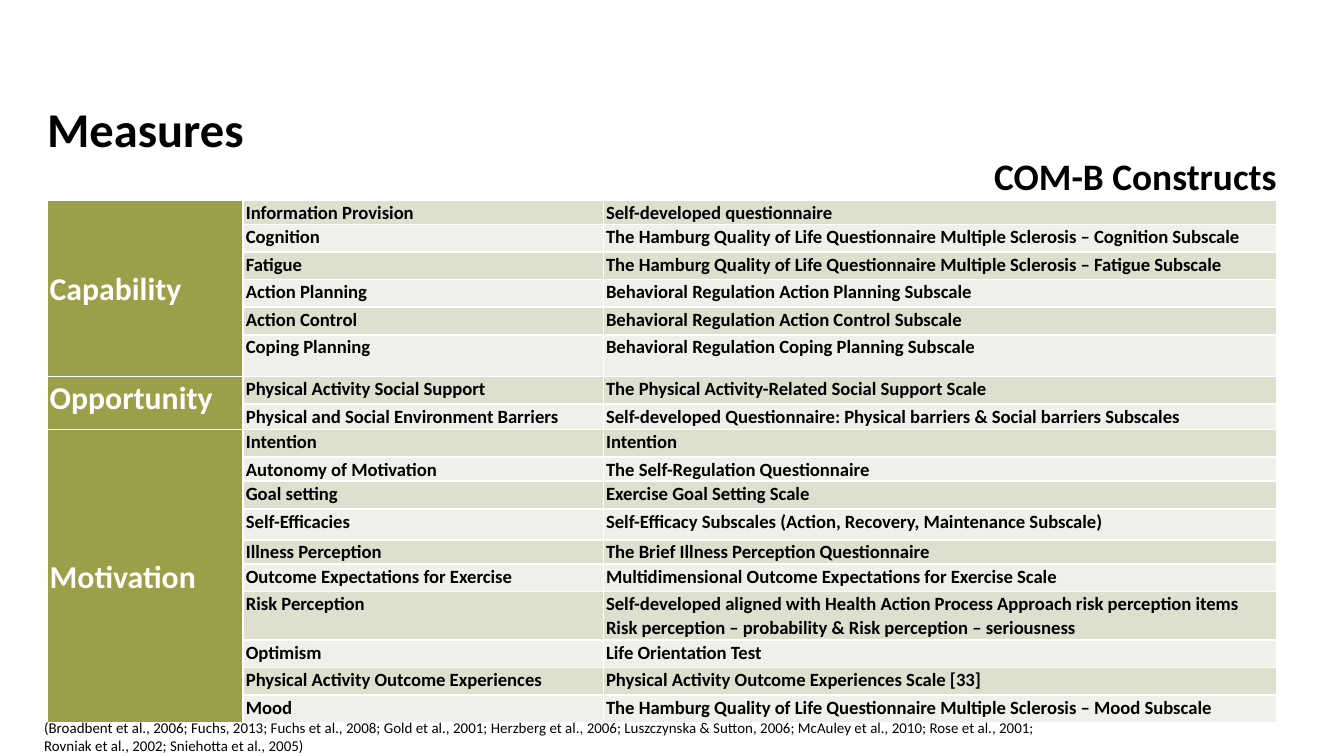
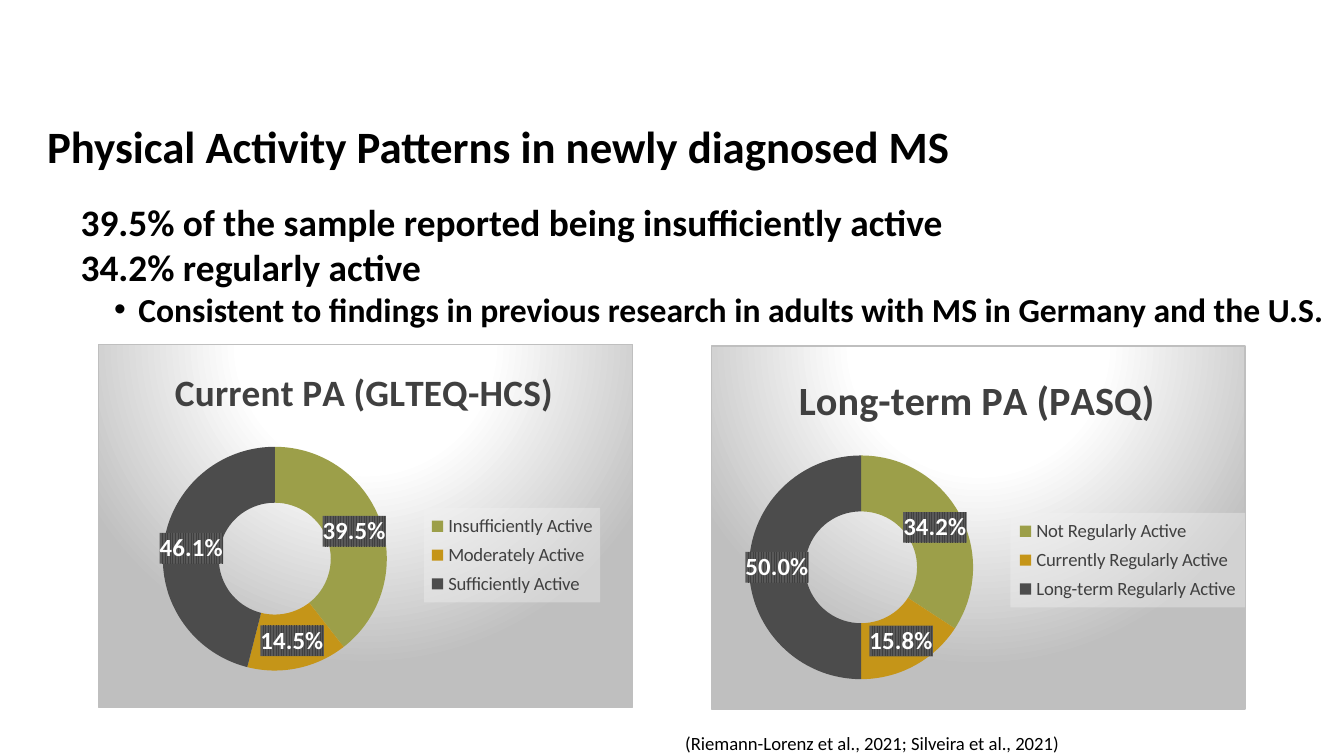
from pptx import Presentation
from pptx.chart.data import CategoryChartData
from pptx.dml.color import RGBColor
from pptx.enum.chart import XL_CHART_TYPE, XL_LEGEND_POSITION
from pptx.enum.text import MSO_ANCHOR, MSO_AUTO_SIZE, PP_ALIGN
from pptx.oxml import parse_xml
from pptx.oxml.ns import nsdecls, qn
from pptx.util import Inches, Pt

DONUT = XL_CHART_TYPE.DOUGHNUT
SIDE = XL_LEGEND_POSITION.RIGHT
TOP, MIDDLE = MSO_ANCHOR.TOP, MSO_ANCHOR.MIDDLE
LEFT, RIGHT = PP_ALIGN.LEFT, PP_ALIGN.RIGHT
FIXED = MSO_AUTO_SIZE.NONE

FACE = "Calibri"
COLORS = {
    "text": "000000", "white": "FFFFFF", "olive": "9C9F49", "gold": "C59518",
    "dark": "4C4C4C", "band": "DEDFCF", "pale": "EFF0E9", "gray": "404040",
    "edge": "BFBFBF", "key": "F2F2F2", "stripe": "595959",
}
SLICES = ["olive", "gold", "dark"]

COLS = [1.46, 2.68, 5.01]
TALL = 3.86
# Fixed row heights; the other rows share the rest of TALL equally
ODD_ROWS = {0: 0.17, 5: 0.31, 7: 0.19, 9: 0.17, 11: 0.23, 12: 0.17, 14: 0.36}
HAMBURG = "The Hamburg Quality of Life Questionnaire Multiple Sclerosis – "
GROUPS = [
    ("Capability", MIDDLE, [
        ("Information Provision", "Self-developed questionnaire"),
        ("Cognition", HAMBURG + "Cognition Subscale"),
        ("Fatigue", HAMBURG + "Fatigue Subscale"),
        ("Action Planning", "Behavioral Regulation Action Planning Subscale"),
        ("Action Control", "Behavioral Regulation Action Control Subscale"),
        ("Coping Planning", "Behavioral Regulation Coping Planning Subscale"),
    ]),
    ("Opportunity", TOP, [
        ("Physical Activity Social Support",
         "The Physical Activity-Related Social Support Scale"),
        ("Physical and Social Environment Barriers",
         "Self-developed Questionnaire: Physical barriers & Social barriers Subscales"),
    ]),
    ("Motivation", MIDDLE, [
        ("Intention", "Intention"),
        ("Autonomy of Motivation", "The Self-Regulation Questionnaire"),
        ("Goal setting", "Exercise Goal Setting Scale"),
        ("Self-Efficacies",
         "Self-Efficacy Subscales (Action, Recovery, Maintenance Subscale)"),
        ("Illness Perception", "The Brief Illness Perception Questionnaire"),
        ("Outcome Expectations for Exercise",
         "Multidimensional Outcome Expectations for Exercise Scale"),
        ("Risk Perception",
         "Self-developed aligned with Health Action Process Approach risk perception items\n"
         "Risk perception – probability & Risk perception – seriousness"),
        ("Optimism", "Life Orientation Test"),
        ("Physical Activity Outcome Experiences",
         "Physical Activity Outcome Experiences Scale [33]"),
        ("Mood", HAMBURG + "Mood Subscale"),
    ]),
]


def rgb(name):
    return RGBColor.from_string(COLORS[name])


def style(font, size, color="text", bold=False):
    font.name, font.size, font.bold = FACE, Pt(size), bold
    font.color.rgb = rgb(color)


def write(para, text, size, color="text", bold=False):
    run = para.add_run()
    run.text = text
    style(run.font, size, color, bold)


def indent(para, left, first):
    props = para._p.get_or_add_pPr()
    props.set("marL", str(Inches(left)))
    props.set("indent", str(Inches(first)))
    return props


def bullet(props, char=None):
    """Give the paragraph a bullet, or none."""
    mark = f'buChar {nsdecls("a")} char="{char}"' if char else f'buNone {nsdecls("a")}'
    props.append(parse_xml(f"<a:{mark}/>"))


def place(shape, left, top, width, height):
    shape.left, shape.top = Inches(left), Inches(top)
    shape.width, shape.height = Inches(width), Inches(height)
    frame = shape.text_frame
    frame.word_wrap, frame.auto_size = True, FIXED
    frame.vertical_anchor = TOP
    return frame


def add_slide(deck, title, size, *box):
    slide = deck.slides.add_slide(deck.slide_layouts[1])
    para = place(slide.shapes.title, *box).paragraphs[0]
    para.alignment = LEFT
    indent(para, 0, 0.25)
    write(para, title, size, bold=True)
    return slide


def add_body(slide, box, lines):
    """Fill the body with (text, size, align, level, left, first, bullet) lines."""
    frame = place(slide.placeholders[1], *box)
    for i, (text, size, align, level, left, first, char) in enumerate(lines):
        para = frame.add_paragraph() if i else frame.paragraphs[0]
        para.level, para.alignment = level, align
        para.space_before = Pt(0)
        bullet(indent(para, left, first), char)
        write(para, text, size, bold=True)


def add_cite(slide, text, size, *box):
    shape = slide.shapes.add_textbox(0, 0, 0, 0)
    write(place(shape, *box).paragraphs[0], text, size)


def format_cell(cell, fill):
    cell.margin_left = cell.margin_right = Inches(0.02)
    cell.margin_top = cell.margin_bottom = 0
    props = cell._tc.get_or_add_tcPr()
    for side in "LRTB":
        props.append(parse_xml(
            f'<a:ln{side} {nsdecls("a")} w="12700"><a:solidFill>'
            f'<a:srgbClr val="{COLORS["white"]}"/></a:solidFill></a:ln{side}>'))
    cell.fill.solid()
    cell.fill.fore_color.rgb = rgb(fill)


def fill_cell(cell, text, size, color="text"):
    for i, line in enumerate(text.split("\n")):
        para = cell.text_frame.add_paragraph() if i else cell.text_frame.paragraphs[0]
        para.line_spacing = 1.07
        write(para, line, size, color, True)


def add_measures(slide):
    count = sum(len(rows) for _, _, rows in GROUPS)
    plain = (TALL - sum(ODD_ROWS.values())) / (count - len(ODD_ROWS))
    table = slide.shapes.add_table(
        count, len(COLS), Inches(0.35), Inches(1.49),
        Inches(sum(COLS)), Inches(TALL)).table
    table.first_row = table.horz_banding = False
    for col, width in zip(table.columns, COLS):
        col.width = Inches(width)
    for i, row in enumerate(table.rows):
        row.height = Inches(ODD_ROWS.get(i, plain))
    start = 0
    for name, anchor, rows in GROUPS:
        for r, texts in enumerate(rows, start):
            label = table.cell(r, 0)
            format_cell(label, "olive")
            label.text_frame.paragraphs[0]._p.get_or_add_endParaRPr().set("sz", "800")
            for c, text in enumerate(texts, 1):
                format_cell(table.cell(r, c), "pale" if r % 2 else "band")
                fill_cell(table.cell(r, c), text, 10)
        head = table.cell(start, 0)
        head.merge(table.cell(start + len(rows) - 1, 0))
        head.vertical_anchor = anchor
        fill_cell(head, name, 17, "white")
        indent(head.text_frame.paragraphs[0], 0.25, -0.27)
        start += len(rows)


def paint(inner):
    return parse_xml(f'<c:spPr {nsdecls("c", "a")}>{inner}</c:spPr>')


def tint(name, alpha=100):
    return f'<a:srgbClr val="{COLORS[name]}"><a:alpha val="{alpha * 1000}"/></a:srgbClr>'


def lay(owner, after, inner, **parts):
    """Set a manual layout, as shares of the chart, behind the child named after."""
    for old in owner.findall(qn("c:layout")):
        owner.remove(old)
    target = '<c:layoutTarget val="inner"/>' if inner else ""
    modes = "".join(f'<c:{k}Mode val="edge"/>' for k in "xy")
    sizes = "".join(f'<c:{k} val="{v}"/>' for k, v in parts.items())
    node = parse_xml(f'<c:layout {nsdecls("c")}><c:manualLayout>{target}{modes}{sizes}'
                     "</c:manualLayout></c:layout>")
    if after:
        owner.find(qn(after)).addnext(node)
    else:
        owner.insert(0, node)


def add_backdrop(chart):
    stops = "".join(f'<a:gs pos="{pos}000">{tint(name)}</a:gs>'
                    for pos, name in [(0, "white"), (39, "white"), (100, "edge")])
    chart._chartSpace.find(qn("c:chart")).addnext(paint(
        f'<a:gradFill><a:gsLst>{stops}</a:gsLst><a:path path="circle">'
        '<a:fillToRect l="50000" t="-80000" r="50000" b="180000"/></a:path></a:gradFill>'
        f'<a:ln w="9525"><a:solidFill>{tint("edge")}</a:solidFill></a:ln>'))


def add_donut(slide, left, top, title, size, series, shares, spots):
    data = CategoryChartData(number_format="0.0%")
    data.categories = list(shares)
    data.add_series(series, list(shares.values()))
    chart = slide.shapes.add_chart(DONUT, Inches(left), Inches(top),
                                   Inches(3.98), Inches(2.71), data).chart
    style(chart.font, 10)
    add_backdrop(chart)

    chart.has_title = True
    write(chart.chart_title.text_frame.paragraphs[0], title, size, "gray", True)
    lay(chart.chart_title._element, "c:tx", False, **spots["title"])

    chart.has_legend = True
    legend = chart.legend
    legend.position, legend.include_in_layout = SIDE, False
    style(legend.font, 10, "gray")
    key = legend._element
    lay(key, "c:legendPos", False, **spots["legend"])
    key.find(qn("c:txPr")).addprevious(
        paint(f'<a:solidFill>{tint("key", 39)}</a:solidFill>'))

    plot = chart.plots[0]
    plot.vary_by_categories = True
    lay(chart._chartSpace.find(".//" + qn("c:plotArea")), None, True, **spots["plot"])
    for i, name in enumerate(SLICES):
        fill = plot.series[0].points[i].format.fill
        fill.solid()
        fill.fore_color.rgb = rgb(name)

    plot.has_data_labels = True
    labels = plot.data_labels
    labels.show_value, labels.show_percentage = True, False
    labels.number_format, labels.number_format_is_linked = "0.0%", False
    style(labels.font, 13.3, "white", True)
    labels._element.find(qn("c:txPr")).addprevious(paint(
        f'<a:pattFill prst="narVert"><a:fgClr>{tint("gray")}</a:fgClr>'
        f'<a:bgClr>{tint("stripe")}</a:bgClr></a:pattFill>'))


def main():
    deck = Presentation()
    deck.slide_width = Inches(10)
    deck.slide_height = deck.slide_width * 9 // 16

    slide = add_slide(deck, "Measures", 26, 0, 0.69, 9.5, 0.79)
    add_body(slide, (0.6, 1.09, 9, 3.61),
             [("COM-B Constructs", 20, RIGHT, 0, 0, 0, None)])
    add_measures(slide)
    add_cite(slide, "(Broadbent et al., 2006; Fuchs, 2013; Fuchs et al., 2008; "
             "Gold et al., 2001; Herzberg et al., 2006; Luszczynska & Sutton, 2006; "
             "McAuley et al., 2010; Rose et al., 2001; Rovniak et al., 2002; "
             "Sniehotta et al., 2005)", 8, 0.23, 5.3, 7.74, 0.37)

    slide = add_slide(deck, "Physical Activity Patterns in newly diagnosed MS", 24,
                      0, 0.83, 9, 0.79)
    add_body(slide, (0, 1.43, 10, 1.08), [
        ("39.5% of the sample reported being insufficiently active",
         20, LEFT, 1, 0.5, 0, None),
        ("34.2% regularly active", 20, LEFT, 1, 0.5, 0, None),
        ("Consistent to findings in previous research in adults with MS "
         "in Germany and the U.S.", 18, LEFT, 1, 0.93, -0.18, "•"),
    ])
    add_donut(slide, 0.73, 2.56, "Current PA (GLTEQ-HCS)", 20, "Current PA (GLTEQ-HCS)",
              {"Insufficiently Active": 0.395, "Moderately Active": 0.145,
               "Sufficiently Active": 0.461},
              {"title": dict(x=0.13, y=0.04),
               "legend": dict(x=0.61, y=0.45, w=0.33, h=0.26),
               "plot": dict(x=0.12, y=0.28, w=0.42, h=0.62)})
    add_donut(slide, 5.29, 2.57, "Long-term PA (PASQ)", 21.6, "Series 1",
              {"Not Regularly Active": 0.342, "Currently Regularly Active": 0.158,
               "Long-term Regularly Active": 0.5},
              {"title": dict(x=0.15, y=0.05),
               "legend": dict(x=0.56, y=0.46, w=0.44, h=0.26),
               "plot": dict(x=0.07, y=0.3, w=0.42, h=0.62)})
    add_cite(slide, "(Riemann-Lorenz et al., 2021; Silveira et al., 2021)", 10,
             5, 5.4, 4.43, 0.27)
    deck.save("out.pptx")


if __name__ == "__main__":
    main()
